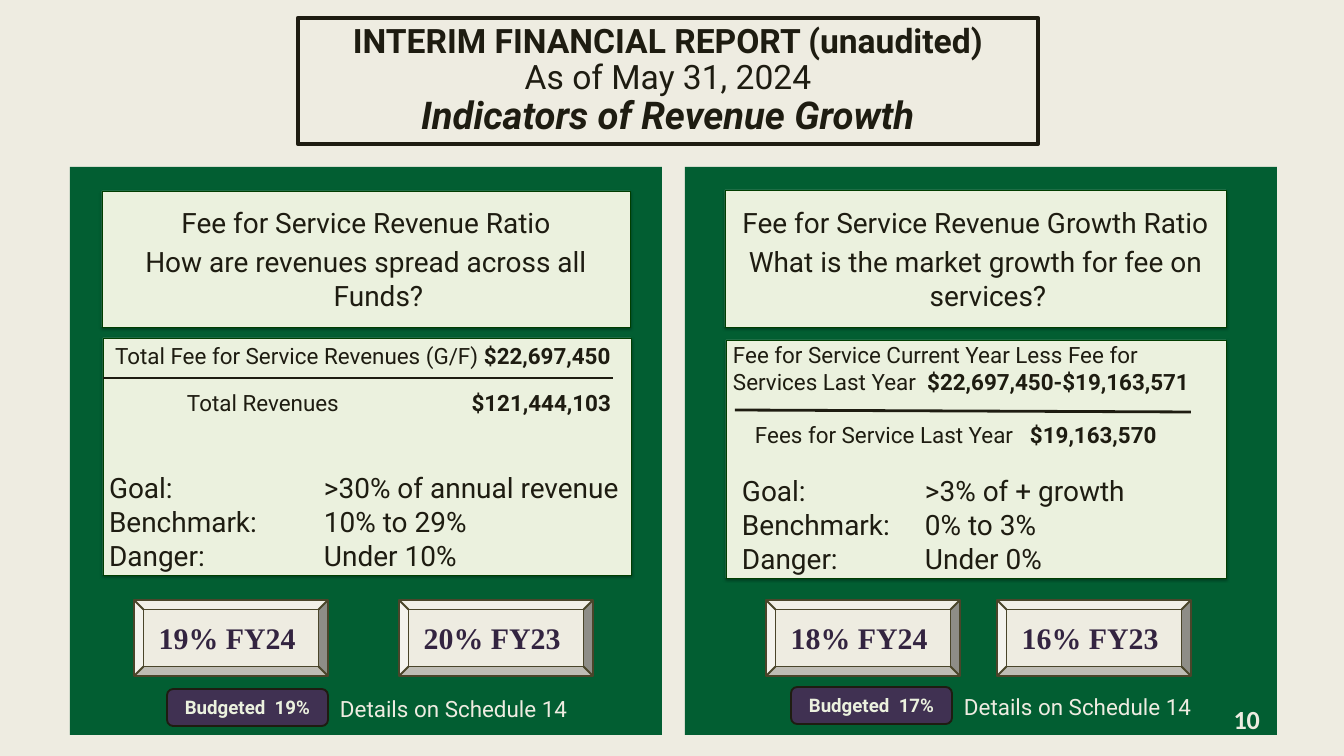
import pptx
import pptx.util
import pptx.dml.color
import pptx.enum.shapes
import pptx.enum.text
import pptx.oxml.ns
import lxml.etree

SHAPES = pptx.enum.shapes.MSO_SHAPE
ALIGN = pptx.enum.text.PP_ALIGN
ANCHOR = pptx.enum.text.MSO_ANCHOR
CREAM, INK, GREEN = "EEECE1", "1E1C11", "025E32"
PALE, FOREST, PURPLE = "EBF1DE", "003E00", "403152"
PLUM, BRONZE = "332440", "4A452A"


def px(value):
    return pptx.util.Emu(round(value * 914400 / 67.2))


def color(value):
    return pptx.dml.color.RGBColor.from_string(value)


def element(parent, tag, **attributes):
    values = {name: str(value) for name, value in attributes.items()}
    return lxml.etree.SubElement(parent, pptx.oxml.ns.qn(tag), values)


class Report:
    def __init__(self, deck):
        self.page = deck.slides.add_slide(deck.slide_layouts[5])
        self.page.background.fill.solid()
        self.page.background.fill.fore_color.rgb = color(CREAM)

    def title(self, place, lines):
        box = self.page.shapes.title
        box.left, box.top, box.width, box.height = map(px, place)
        box.fill.solid()
        box.fill.fore_color.rgb = color(CREAM)
        box.line.color.rgb = color(INK)
        box.line.width = pptx.util.Pt(4.5)
        frame = self.frame(box, (0, 0, 0, 0), ANCHOR.MIDDLE)
        para = frame.paragraphs[0]
        para.alignment = ALIGN.CENTER
        para.line_spacing = 0.9
        self.font(para.font, 36, INK)
        for index, (text, size, bold, italic) in enumerate(lines):
            if index:
                para.add_line_break()
            span = para.add_run()
            span.text = text
            span.font.size = pptx.util.Pt(size)
            span.font.bold, span.font.italic = bold, italic

    def font(self, font, size, ink, name="Roboto", bold=False):
        font.size = pptx.util.Pt(size)
        font.name = name
        font.bold = bold
        font.color.rgb = color(ink)

    def frame(self, box, insets=(7, 3, 7, 3), anchor=ANCHOR.TOP):
        frame = box.text_frame
        frame.word_wrap = True
        frame.auto_size = pptx.enum.text.MSO_AUTO_SIZE.NONE
        frame.vertical_anchor = anchor
        (frame.margin_left, frame.margin_top,
         frame.margin_right, frame.margin_bottom) = map(px, insets)
        return frame

    def text(self, frame, lines, size, ink=INK, name="Roboto", bold=False,
             align=ALIGN.LEFT, gap=0, tabs=(), hang=0):
        for index, spans in enumerate(lines):
            para = frame.add_paragraph() if index else frame.paragraphs[0]
            properties = para._p.get_or_add_pPr()
            if hang:
                properties.set("marL", str(px(hang)))
                properties.set("indent", str(px(-hang)))
            if tabs:
                stops = element(properties, "a:tabLst")
                for place, side in tabs:
                    element(stops, "a:tab", pos=px(place), algn=side)
            para.alignment = align
            if index:
                para.space_before = pptx.util.Pt(gap)
            self.font(para.font, size, ink, name, bold)
            for order, words in enumerate(spans):
                span = para.add_run()
                span.text = words
                if len(spans) > 1:
                    span.font.bold = order % 2 == 1

    def box(self, kind, place, fill, line=None, width=1):
        box = self.page.shapes.add_shape(kind, *map(px, place))
        box.shadow.inherit = False
        box.fill.solid()
        box.fill.fore_color.rgb = color(fill)
        if line:
            box.line.color.rgb = color(line)
            box.line.width = pptx.util.Pt(width)
        else:
            box.line.fill.background()
        return box

    def card(self, place):
        card = self.box(SHAPES.RECTANGLE, place, PALE, FOREST, 0.75)
        effects = card._element.spPr.find(pptx.oxml.ns.qn("a:effectLst"))
        shadow = element(effects, "a:outerShdw", blurRad=pptx.util.Pt(3.1),
                         dist=pptx.util.Pt(1.8), dir=5400000, rotWithShape=0)
        shade = element(shadow, "a:srgbClr", val="000000")
        element(shade, "a:alpha", val=35000)
        return card

    def question(self, place, lines):
        frame = self.frame(self.card(place), anchor=ANCHOR.MIDDLE)
        self.text(frame, [[line] for line in lines], 30,
                  align=ALIGN.CENTER, gap=6, hang=25)

    def label(self, place, lines, size, ink=INK, insets=(7, 3, 7, 3), **style):
        box = self.page.shapes.add_textbox(*map(px, place))
        self.text(self.frame(box, insets), lines, size, ink, **style)

    def button(self, kind, place, fill, line, words, size, ink, name="Roboto"):
        box = self.box(kind, place, fill, line, 2)
        frame = self.frame(box, anchor=ANCHOR.MIDDLE)
        self.text(frame, [[words]], size, ink, name, True, ALIGN.CENTER)

    def rule(self, *ends):
        rule = self.page.shapes.add_connector(
            pptx.enum.shapes.MSO_CONNECTOR.STRAIGHT, *map(px, ends))
        rule.line.color.rgb = color(INK)
        rule.line.width = pptx.util.Pt(3)
        element(rule._element.spPr, "a:effectLst")


def main():
    deck = pptx.Presentation()
    deck.slide_width, deck.slide_height = px(1344), px(756)
    report = Report(deck)
    report.title((298, 18, 740, 126), [
        ("INTERIM FINANCIAL REPORT (unaudited)", 36, True, False),
        ("As of May 31, 2024", 36, False, False),
        ("Indicators of Revenue Growth", 41, True, True)])

    for left in (70, 685):
        report.box(SHAPES.RECTANGLE, (left, 167, 592, 568), GREEN)

    report.question((102, 191, 528, 136), [
        "Fee for Service Revenue Ratio",
        "How are revenues spread across all Funds?"])
    report.question((725, 190, 501, 137), [
        "Fee for Service Revenue Growth Ratio",
        "What is the market growth for fee on services?"])

    ratio = report.card((103, 338, 528, 237))
    report.text(report.frame(ratio, (12, 4, 7, 3)), [
        ["Total Fee for Service Revenues (G/F) ", "$22,697,450"],
        ["\tTotal Revenues\t", "$121,444,103"]],
        24, gap=22, tabs=[(72, "l"), (496, "r")])
    report.rule(103, 378, 613, 378)

    report.card((726, 340, 500, 238))
    report.label((720, 338, 507, 115), [
        ["Fee for Service Current Year Less Fee for Services Last Year  ",
         "$22,697,450-$19,163,571"],
        ["\tFees for Service Last Year\t", "$19,163,570"]],
        24, insets=(13, 3, 7, 3), gap=28, tabs=[(22, "l"), (297, "l")])
    report.rule(735, 410, 1191, 412)

    goals = [
        ((102, 468, 528, 109), 215,
         (">30% of annual revenue", "10% to 29%", "Under 10%")),
        ((735, 471, 474, 109), 183,
         (">3% of + growth", "0% to 3%", "Under 0%"))]
    for place, tab, ranges in goals:
        lines = [[f"{name}:\t{reach}"] for name, reach
                 in zip(("Goal", "Benchmark", "Danger"), ranges)]
        report.label(place, lines, 30, tabs=[(tab, "l")])

    for left, words in ((134, "19% FY24 "), (399, "20% FY23 "),
                        (766, "18% FY24 "), (997, "16% FY23 ")):
        report.button(SHAPES.BEVEL, (left, 600, 194, 76), CREAM, BRONZE,
                      words, 32, PLUM, "Times New Roman")

    for left, top, words in ((167, 689, "Budgeted  19%"),
                             (791, 687, "Budgeted  17%")):
        report.button(SHAPES.ROUNDED_RECTANGLE, (left, top, 161, 37),
                      PURPLE, INK, words, 20, PALE)
        report.label((left + 166, top + 3, 258, 34),
                     [["Details on Schedule 14"]], 24, CREAM)

    report.label((1232, 703, 28, 32), [["10"]], 28, CREAM, (0, 0, 0, 0),
                 name="Calibri", bold=True, align=ALIGN.RIGHT)
    deck.save("out.pptx")


if __name__ == "__main__":
    main()
